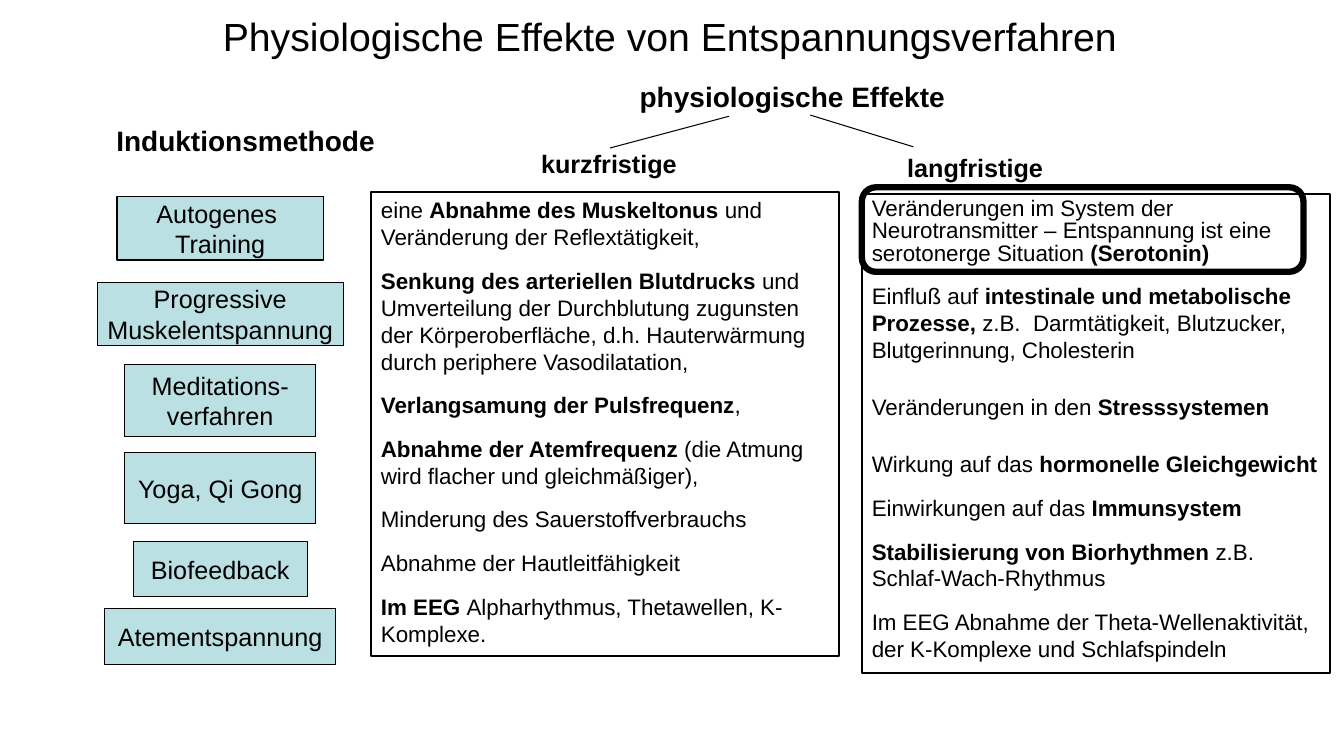
from lxml import etree
from pptx import Presentation
from pptx.dml.color import RGBColor
from pptx.enum.shapes import MSO_CONNECTOR as CONN, MSO_SHAPE as SHAPE
from pptx.enum.text import MSO_ANCHOR as ANCHOR, MSO_AUTO_SIZE as FIT, PP_ALIGN as ALIGN
from pptx.oxml.ns import qn
from pptx.util import Cm, Pt

BLACK, TEAL = "000000", "BBE0E3"

METHODS = [
    ("Autogenes \vTraining", 4.95, 5.21, 1.6, 1),
    ("Progressive\vMuskelentspannung", 7.11, 6.2, 1.6, 0.75),
    ("Meditations-\vverfahren", 9.19, 4.8, 1.8, 0.75),
    ("Yoga, Qi Gong", 11.4, 4.8, 1.8, 0.75),
    ("Biofeedback", 13.64, 4.39, 1.4, 0.75),
    ("Atementspannung", 15.34, 5.82, 1.4, 0.75),
]
SHORT_TERM = [
    ("eine **Abnahme des Muskeltonus **und Veränderung der Reflextätigkeit,", None),
    ("**Senkung des arteriellen Blutdrucks **und Umverteilung der Durchblutung zugunsten "
     "der Körperoberfläche, d.h. Hauterwärmung durch periphere Vasodilatation,", None),
    ("**Verlangsamung der Pulsfrequenz**,", None),
    ("**Abnahme der Atemfrequenz **(die Atmung wird flacher und gleichmäßiger),", None),
    ("Minderung des Sauerstoffverbrauchs", None),
    ("Abnahme der Hautleitfähigkeit", None),
    ("**Im EEG **Alpharhythmus, Thetawellen, K-Komplexe.", None),
]
LONG_TERM = [
    ("Veränderungen im System der Neurotransmitter – Entspannung ist eine "
     "serotonerge Situation **(Serotonin)**", Pt(16)),
    ("Einfluß auf **intestinale und metabolische Prozesse,** z.B.  Darmtätigkeit, "
     "Blutzucker, Blutgerinnung, Cholesterin", None),
    ("Veränderungen in den **Stresssystemen**", 1.5),
    ("Wirkung auf das **hormonelle Gleichgewicht**", 1.5),
    ("Einwirkungen auf das **Immunsystem**", None),
    ("**Stabilisierung von Biorhythmen **z.B. Schlaf-Wach-Rhythmus", None),
    ("Im EEG Abnahme der Theta-Wellenaktivität, der K-Komplexe und Schlafspindeln", None),
]


def color(value):
    return RGBColor.from_string(value)


def cm(*values):
    return [Cm(v) for v in values]


def write(p, text, size=18, bold=False, align=ALIGN.CENTER, spacing=None, after=0):
    p.alignment = align
    p.space_before, p.space_after = Pt(0), Pt(after)
    if spacing:
        p.line_spacing = spacing
    for i, part in enumerate(text.split("**")):
        for j, line in enumerate(part.split("\v")):
            if j:
                p.add_line_break()
            if line:
                r = p.add_run()
                r.text = line
                r.font.name, r.font.size = "Arial", Pt(size)
                r.font.bold = bold or i % 2 == 1
                r.font.color.rgb = color(BLACK)


def frame(s, box, width, fill=None, kind=SHAPE.RECTANGLE):
    sp = s.shapes.add_shape(kind, *cm(*box))
    sp.shadow.inherit = False
    if fill:
        sp.fill.solid()
        sp.fill.fore_color.rgb = color(fill)
    else:
        sp.fill.background()
    sp.line.color.rgb = color(BLACK)
    sp.line.width = Pt(width)
    return sp


def heading(s, box, text, size):
    tf = s.shapes.add_textbox(*cm(*box)).text_frame
    tf.word_wrap = True
    tf.auto_size = FIT.SHAPE_TO_FIT_TEXT
    write(tf.paragraphs[0], text, size=size, bold=True)


def branch(s, x1, y1, x2, y2):
    c = s.shapes.add_connector(CONN.STRAIGHT, *cm(x1, y1, x2, y2))
    c.line.color.rgb = color(BLACK)
    c.line.width = Pt(0.75)
    etree.SubElement(c._element.spPr, qn("a:effectLst"))


def title(s, box, text):
    sp = s.shapes.title
    sp.left, sp.top, sp.width, sp.height = cm(*box)
    tf = sp.text_frame
    tf.auto_size = FIT.NONE
    tf.vertical_anchor = ANCHOR.MIDDLE
    write(tf.paragraphs[0], text, size=28)


def method_list(s, center):
    heading(s, (center - 2.96, 3, 7.4, 1.1), "Induktionsmethode ", 20)
    for text, top, width, height, line in METHODS:
        sp = frame(s, (center - width / 2, top, width, height), line, TEAL)
        tf = sp.text_frame
        tf.word_wrap = False
        tf.vertical_anchor = ANCHOR.MIDDLE
        write(tf.paragraphs[0], text)


def effects_header(s, x, y):
    heading(s, (x, y, 9.2, 1.12), "physiologische Effekte", 20)
    branch(s, x + 3, y + 1.05, x, y + 1.85)
    branch(s, x + 7.65, y + 1.82, x + 5.05, y + 1.02)


def effects_column(s, box, label, label_box, effects):
    heading(s, label_box, label, 18)
    tf = frame(s, box, 1.5).text_frame
    tf.word_wrap = True
    tf.auto_size = FIT.SHAPE_TO_FIT_TEXT
    tf.vertical_anchor = ANCHOR.TOP
    for i, (text, spacing) in enumerate(effects):
        p = tf.add_paragraph() if i else tf.paragraphs[0]
        write(p, text, size=16, align=ALIGN.LEFT, spacing=spacing, after=12)


def highlight(s, box):
    frame(s, box, 4.5, kind=SHAPE.ROUNDED_RECTANGLE)


def main():
    prs = Presentation()
    prs.slide_width, prs.slide_height = cm(33.87, 19.05)
    s = prs.slides.add_slide(prs.slide_layouts[5])
    title(s, (3.91, 0.13, 25.93, 1.57), "Physiologische Effekte von Entspannungsverfahren")
    method_list(s, 5.55)
    effects_header(s, 15.37, 1.88)
    effects_column(s, (9.35, 4.83, 11.79, 11.71), "kurzfristige ",
                   (13.34, 3.61, 4.19, 1.02), SHORT_TERM)
    effects_column(s, (21.72, 4.88, 11.79, 12.07), "langfristige",
                   (22.38, 3.71, 4.39, 1.02), LONG_TERM)
    highlight(s, (21.72, 4.72, 11.13, 2.13))
    prs.save("out.pptx")


if __name__ == "__main__":
    main()
